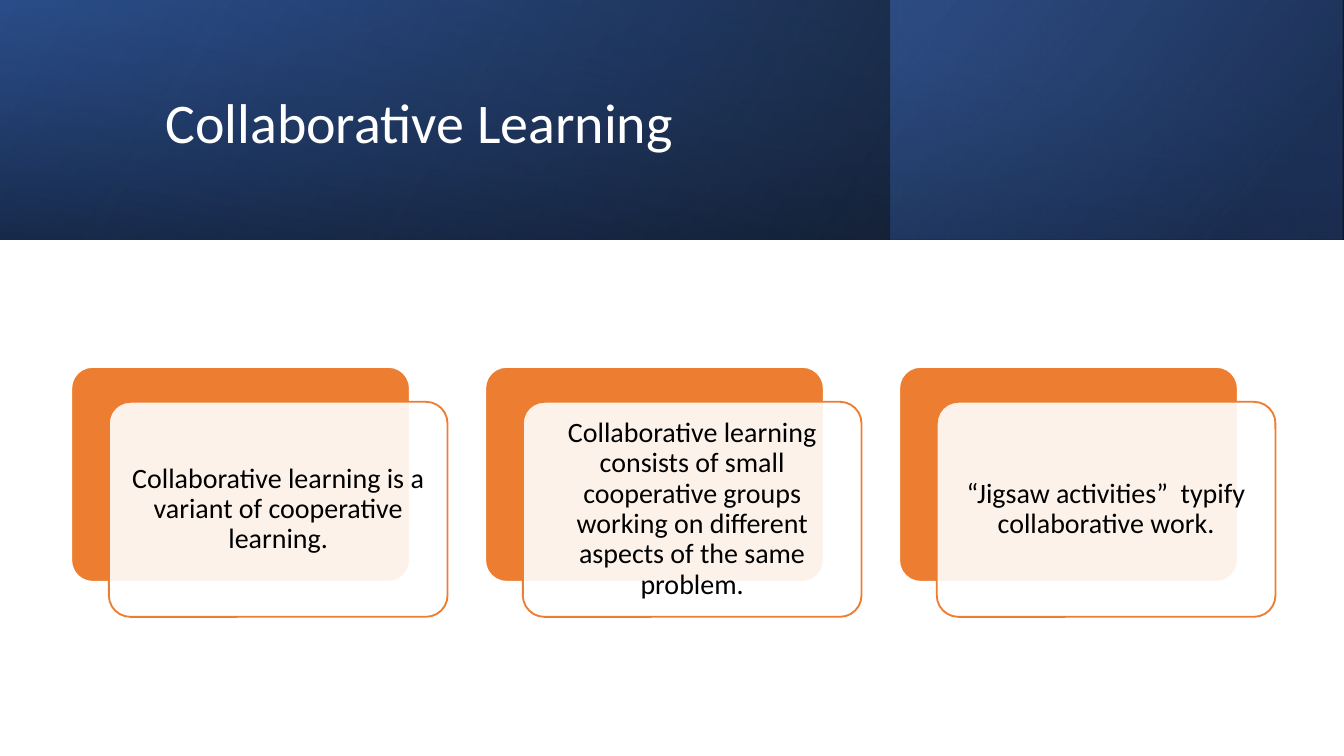
from lxml.etree import SubElement
from pptx import Presentation
from pptx.dml.color import RGBColor
from pptx.enum.shapes import MSO_SHAPE
from pptx.enum.text import MSO_ANCHOR, PP_ALIGN
from pptx.oxml.ns import qn
from pptx.util import Inches, Pt

COLORS = {
    "white": "FFFFFF",
    "black": "000000",
    "orange": "ED7D31",
    "blue": "2F5597",
    "navy": "203864",
    "sky": "4472C4",
}
FONT = "Calibri"
SLIDE_WIDTH = 10
SLIDE_HEIGHT = SLIDE_WIDTH * 9 / 16
STATEMENTS = [
    "Collaborative learning is a variant of cooperative learning.",
    "Collaborative learning consists of small cooperative groups working on "
    "different aspects of the same problem.",
    "“Jigsaw activities”  typify collaborative work.",
]


def rgb(name):
    return RGBColor.from_string(COLORS[name])


def set_alpha(color_element, percent):
    SubElement(color_element, qn("a:alpha"), val=str(percent * 1000))


def format_paragraph(paragraph, size, color, alignment):
    paragraph.alignment = alignment
    paragraph.line_spacing = 0.9
    font = paragraph.runs[0].font
    font.name = FONT
    font.size = Pt(size)
    font.color.rgb = rgb(color)


def add_gradient_panel(slide, left, top, width, height, stops, angle, rotation=0):
    panel = slide.shapes.add_shape(
        MSO_SHAPE.RECTANGLE, Inches(left), Inches(top), Inches(width), Inches(height)
    )
    panel.shadow.inherit = False
    panel.line.fill.background()
    panel.rotation = rotation
    properties = panel.element.spPr
    properties.find(qn("a:xfrm")).set("flipH", "1")

    panel.fill.gradient()
    gradient = properties.find(qn("a:gradFill"))
    for child in list(gradient):
        gradient.remove(child)
    stop_list = SubElement(gradient, qn("a:gsLst"))
    for position, color, alpha in stops:
        stop = SubElement(stop_list, qn("a:gs"), pos=str(position * 1000))
        stop_color = SubElement(stop, qn("a:srgbClr"), val=COLORS[color])
        set_alpha(stop_color, alpha)
    SubElement(gradient, qn("a:lin"), ang=str(angle * 60000), scaled="0")


def add_banner(slide, left, top, width, height):
    add_gradient_panel(slide, left, top, width, height,
                       [(0, "black", 96), (100, "blue", 100)], 330)
    accent_left = 6.63
    add_gradient_panel(slide, left + accent_left, top, 3.36, height,
                       [(19, "navy", 68), (100, "sky", 48)], 320)
    offset = (width - height) / 2
    add_gradient_panel(slide, left + offset, top - offset, height, width,
                       [(23, "blue", 16), (99, "black", 45)], 350, rotation=270)


def add_title(slide, left, top, width, height):
    title = slide.shapes.title
    title.left, title.top = Inches(left), Inches(top)
    title.width, title.height = Inches(width), Inches(height)
    title.text_frame.text = "Collaborative Learning"
    title.text_frame.vertical_anchor = MSO_ANCHOR.MIDDLE
    format_paragraph(title.text_frame.paragraphs[0], 30, "white", PP_ALIGN.LEFT)
    tree = title.element.getparent()
    tree.remove(title.element)
    tree.append(title.element)


def add_panel(slide, left, top, width, height, fill, line):
    panel = slide.shapes.add_shape(
        MSO_SHAPE.ROUNDED_RECTANGLE,
        Inches(left), Inches(top), Inches(width), Inches(height),
    )
    panel.adjustments[0] = 0.1
    panel.shadow.inherit = False
    panel.fill.solid()
    panel.fill.fore_color.rgb = rgb(fill)
    panel.line.color.rgb = rgb(line)
    panel.line.width = Pt(1)
    return panel


def add_card(slide, left, top, width, height, statement):
    shift_x, shift_y = 0.28, 0.26
    panel_width, panel_height = width - shift_x, height - shift_y
    add_panel(slide, left, top, panel_width, panel_height, "orange", "white")
    front = add_panel(slide, left + shift_x, top + shift_y, panel_width, panel_height,
                      "white", "orange")
    set_alpha(front.element.spPr.find(qn("a:solidFill"))[0], 90)

    frame = front.text_frame
    frame.word_wrap = True
    frame.vertical_anchor = MSO_ANCHOR.MIDDLE
    frame.margin_left = frame.margin_right = Inches(0.1)
    frame.margin_top = frame.margin_bottom = Inches(0.1)
    frame.text = statement
    format_paragraph(frame.paragraphs[0], 15, "black", PP_ALIGN.CENTER)


def add_cards(slide, left, top, width, height):
    gap = 0.28
    card_width = (width - gap * (len(STATEMENTS) - 1)) / len(STATEMENTS)
    for index, statement in enumerate(STATEMENTS):
        add_card(slide, left + index * (card_width + gap), top, card_width, height, statement)


def main():
    presentation = Presentation()
    presentation.slide_width = Inches(SLIDE_WIDTH)
    presentation.slide_height = Inches(SLIDE_HEIGHT)
    slide = presentation.slides.add_slide(presentation.slide_layouts[5])
    add_banner(slide, 0, 0, SLIDE_WIDTH, 1.78)
    add_title(slide, 1.13, 0.29, 7.97, 1.29)
    add_cards(slide, 0.53, 2.73, 8.96, 1.86)
    presentation.save("out.pptx")


if __name__ == "__main__":
    main()
